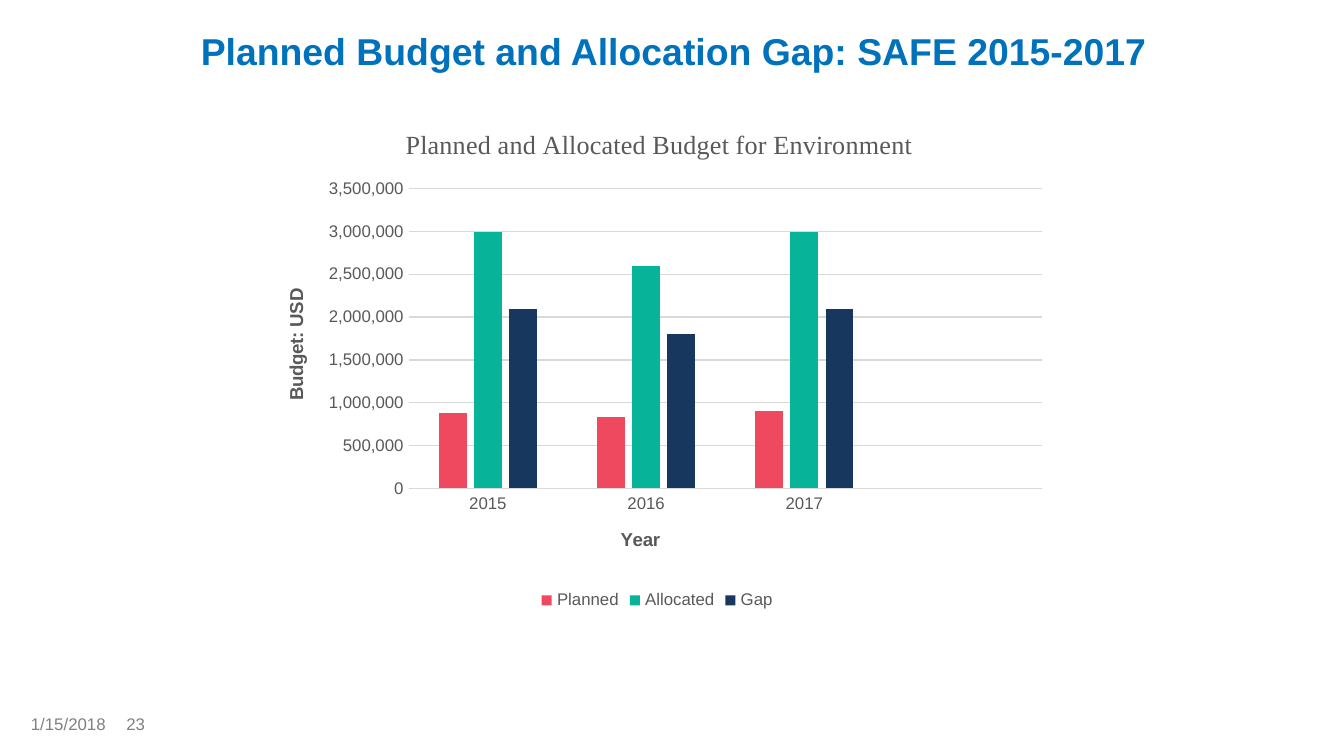
from lxml.etree import SubElement as Sub
from pptx import Presentation
from pptx.chart.data import CategoryChartData as Data
from pptx.dml.color import RGBColor as Rgb
from pptx.enum.chart import XL_CHART_TYPE as Kind, XL_LEGEND_POSITION as Spot
from pptx.enum.chart import XL_TICK_MARK as Tick
from pptx.enum.text import MSO_ANCHOR as Anchor, PP_ALIGN as Align
from pptx.oxml.ns import qn
from pptx.util import Inches, Pt

HUES = {
    "title": "0072BC", "foot": "808080", "label": "595959", "grid": "D9D9D9",
    "Planned": "EF4960", "Allocated": "08B499", "Gap": "17375F",
}
YEARS = ["2015", "2016", "2017", ""]
SUMS = {
    "Planned": [880000, 830000, 900000, None],
    "Allocated": [3000000, 2600000, 3000000, None],
    "Gap": [2100000, 1800000, 2100000, None],
}


def apply(item, **vals):
    for key, val in vals.items():
        setattr(item, key, val)


class Deck:
    def __init__(self, wide, ratio):
        self.file = Presentation()
        apply(self.file, slide_width=Inches(wide),
              slide_height=Inches(wide / ratio))
        self.slide = self.file.slides.add_slide(self.file.slide_layouts[6])

    def style(self, font, size, hue="label", bold=False, name="Arial"):
        apply(font, size=Pt(size), bold=bold, name=name)
        font.color.rgb = Rgb.from_string(HUES[hue])

    def text(self, words, box, size, hue, bold=False, **form):
        frame = self.slide.shapes.add_textbox(*map(Inches, box)).text_frame
        apply(frame, word_wrap=True, margin_left=0, margin_top=0,
              margin_right=0, margin_bottom=0)
        frame.vertical_anchor = form.pop("anchor", Anchor.TOP)
        par = frame.paragraphs[0]
        apply(par, **form)
        run = par.add_run()
        run.text = words
        self.style(run.font, size, hue, bold)

    def place(self, node, index, **spots):
        for old in node.findall(qn("c:layout")):
            node.remove(old)
        lay = node.makeelement(qn("c:layout"), {})
        node.insert(index, lay)
        man = Sub(lay, qn("c:manualLayout"))
        if "w" in spots:
            Sub(man, qn("c:layoutTarget"), val="inner")
        for key in "xy":
            Sub(man, qn(f"c:{key}Mode"), val="edge")
        for key, val in spots.items():
            Sub(man, qn(f"c:{key}"), val=str(val))

    def head(self, title, words, size, x, y, turn=0, **form):
        frame = title.text_frame
        frame.text = words
        self.style(frame.paragraphs[0].runs[0].font, size, **form)
        body = next(title._element.iter(qn("a:bodyPr")))
        body.set("rot", str(turn * 60000))
        self.place(title._element, 1, x=x, y=y)

    def line(self, form):
        form.line.width = Pt(0.75)
        form.line.color.rgb = Rgb.from_string(HUES["grid"])

    def chart(self, box, title, cats, rows):
        data = Data(number_format="#,##0")
        data.categories = cats
        for name, vals in rows.items():
            data.add_series(name, vals)
        chart = self.slide.shapes.add_chart(
            Kind.COLUMN_CLUSTERED, *map(Inches, box), data).chart
        self.style(chart.font, 10)
        self.head(chart.chart_title, title, 14, 0.18, 0.03,
                  name="Times New Roman")
        plot = chart.plots[0]
        apply(plot, gap_width=219, overlap=-27, vary_by_categories=False)
        for bar in plot.series:
            bar.format.fill.solid()
            bar.format.fill.fore_color.rgb = Rgb.from_string(HUES[bar.name])
        self.place(chart._chartSpace.chart.plotArea, 0,
                   x=0.19, y=0.16, w=0.79, h=0.59)
        self.axes(chart.category_axis, chart.value_axis)
        chart.has_legend = True
        apply(chart.legend, position=Spot.BOTTOM, include_in_layout=False)
        self.style(chart.legend.font, 9)

    def axes(self, base, side):
        for axis in (base, side):
            apply(axis, major_tick_mark=Tick.NONE, minor_tick_mark=Tick.NONE)
            self.style(axis.tick_labels.font, 9)
        self.line(base.format)
        side.format.line.fill.background()
        apply(side, minimum_scale=0, maximum_scale=3500000, major_unit=500000,
              has_major_gridlines=True)
        self.line(side.major_gridlines.format)
        apply(side.tick_labels, number_format="#,##0",
              number_format_is_linked=False)
        self.head(base.axis_title, "Year", 10, 0.45, 0.82, bold=True)
        self.head(side.axis_title, "Budget: USD", 10, 0.03, 0.35, -90,
                  bold=True)


def main():
    deck = Deck(10, 16 / 9)
    deck.text("Planned Budget and Allocation Gap: SAFE 2015-2017",
              (0.23, 0.06, 9.57, 0.49), 20, "title", True,
              anchor=Anchor.BOTTOM, alignment=Align.CENTER, line_spacing=0.9)
    deck.chart((1.91, 0.8, 5.96, 3.78),
               "Planned and Allocated Budget for Environment", YEARS, SUMS)
    for words, left, wide in (("1/15/2018", 0.23, 0.71), ("23", 0.94, 0.5)):
        deck.text(words, (left, 5.31, wide, 0.17), 9, "foot")
    deck.file.save("out.pptx")


if __name__ == "__main__":
    main()
